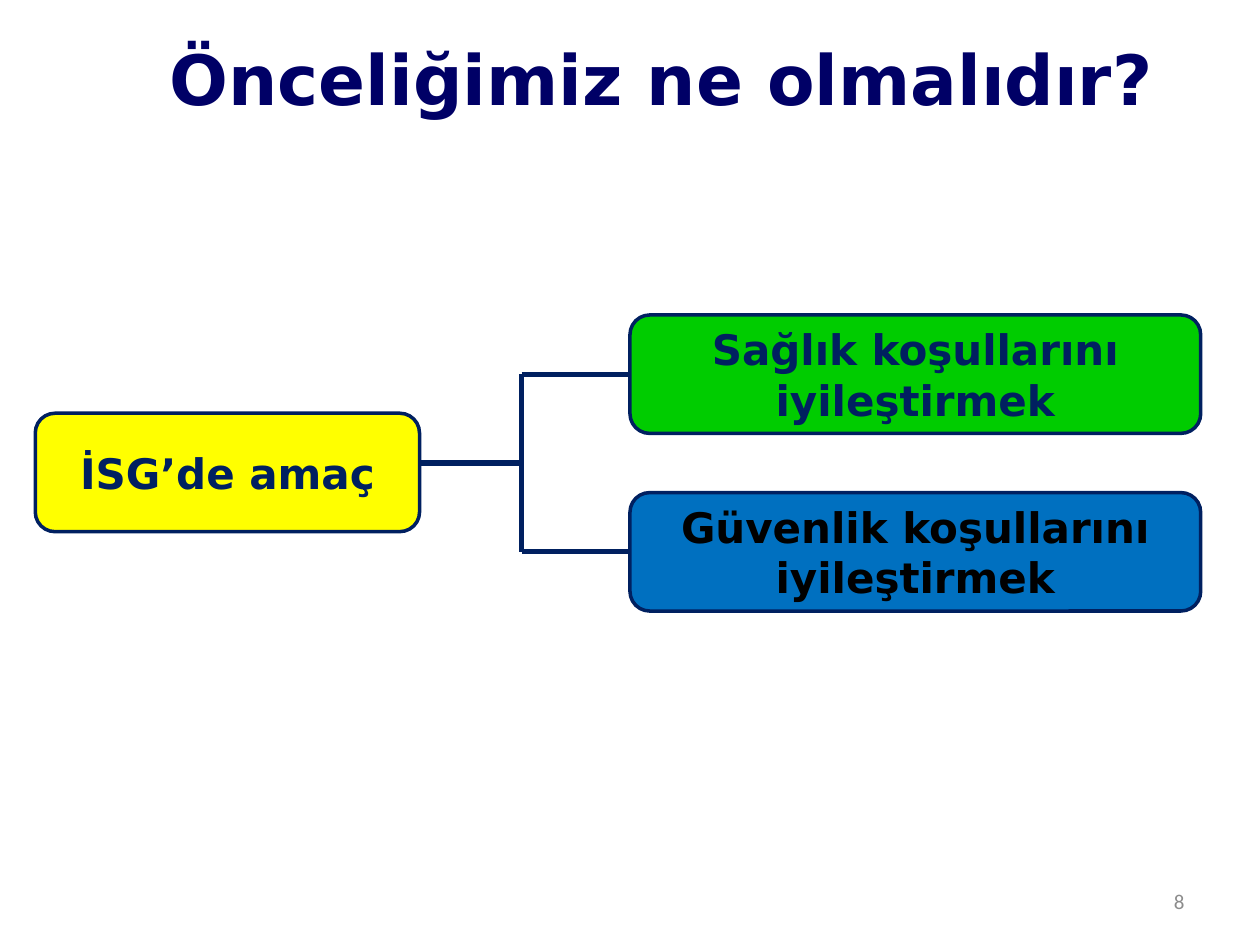
from lxml.etree import SubElement
from pptx import Presentation
from pptx.dml.color import RGBColor
from pptx.enum.shapes import MSO_CONNECTOR, MSO_SHAPE
from pptx.enum.text import MSO_ANCHOR, PP_ALIGN
from pptx.oxml.ns import qn
from pptx.util import Inches, Pt

COLORS = {
    "title": "000066",
    "navy": "002060",
    "gray": "8C8C8C",
    "yellow": "FFFF00",
    "green": "00CC00",
    "blue": "0070C0",
    "black": "000000",
}
FONT = "DejaVu Sans"
BOX_H = 0.94
GOAL_X = 5
GOAL_W = 4.53
GOAL_TOP = 2.5
GOAL_STEP = 1.41
SPINE_X = 4.14


def color(name):
    return RGBColor.from_string(COLORS[name])


def write(shape, text, size, ink, font=FONT, bold=True,
          align=PP_ALIGN.CENTER, anchor=MSO_ANCHOR.MIDDLE):
    frame = shape.text_frame
    frame.word_wrap = True
    frame.vertical_anchor = anchor
    para = frame.paragraphs[0]
    para.text = text
    para.alignment = align
    para.font.name = font
    para.font.size = Pt(size)
    para.font.bold = bold
    para.font.color.rgb = color(ink)


def add_label(slide, area, text, size, ink, **style):
    label = slide.shapes.add_textbox(*map(Inches, area))
    label.text_frame.margin_top = label.text_frame.margin_bottom = 0
    write(label, text, size, ink, **style)


def add_box(slide, left, top, width, text, fill, ink):
    area = map(Inches, (left, top, width, BOX_H))
    box = slide.shapes.add_shape(MSO_SHAPE.ROUNDED_RECTANGLE, *area)
    box.shadow.inherit = False
    box.fill.solid()
    box.fill.fore_color.rgb = color(fill)
    box.line.color.rgb = color("navy")
    box.line.width = Pt(2)
    write(box, text, 24, ink)
    return box


def add_line(slide, start, end):
    ends = map(Inches, (*start, *end))
    line = slide.shapes.add_connector(MSO_CONNECTOR.STRAIGHT, *ends)
    line.line.color.rgb = color("navy")
    line.line.width = Pt(3)
    SubElement(line._element.spPr, qn("a:effectLst"))
    return line


def main():
    deck = Presentation()
    deck.slide_width, deck.slide_height = Inches(10), Inches(7.5)
    slide = deck.slides.add_slide(deck.slide_layouts[6])

    add_label(slide, (0.75, 0.29, 9, 1.25), "Önceliğimiz ne olmalıdır?",
              39.6, "title", anchor=MSO_ANCHOR.TOP)
    add_label(slide, (7.17, 6.95, 2.33, 0.4), "8", 12, "gray",
              font="Calibri", bold=False, align=PP_ALIGN.RIGHT)

    goals = [
        ("Sağlık koşullarını iyileştirmek", "green", "navy"),
        ("Güvenlik koşullarını iyileştirmek", "blue", "black"),
    ]
    tops = [GOAL_TOP + i * GOAL_STEP for i in range(len(goals))]
    mids = [top + BOX_H / 2 for top in tops]
    trunk = sum(mids) / len(mids)

    add_line(slide, (SPINE_X, trunk), (3.2, trunk))
    add_box(slide, 0.28, 3.28, 3.05, "İSG’de amaç", "yellow", "navy")
    for top, mid, goal in zip(tops, mids, goals):
        branch = add_line(slide, (SPINE_X, mid), (GOAL_X, mid))
        box = add_box(slide, GOAL_X, top, GOAL_W, *goal)
        branch.end_connect(box, 1)
    add_line(slide, (SPINE_X, mids[0]), (SPINE_X, mids[-1]))

    deck.save("out.pptx")


if __name__ == "__main__":
    main()
